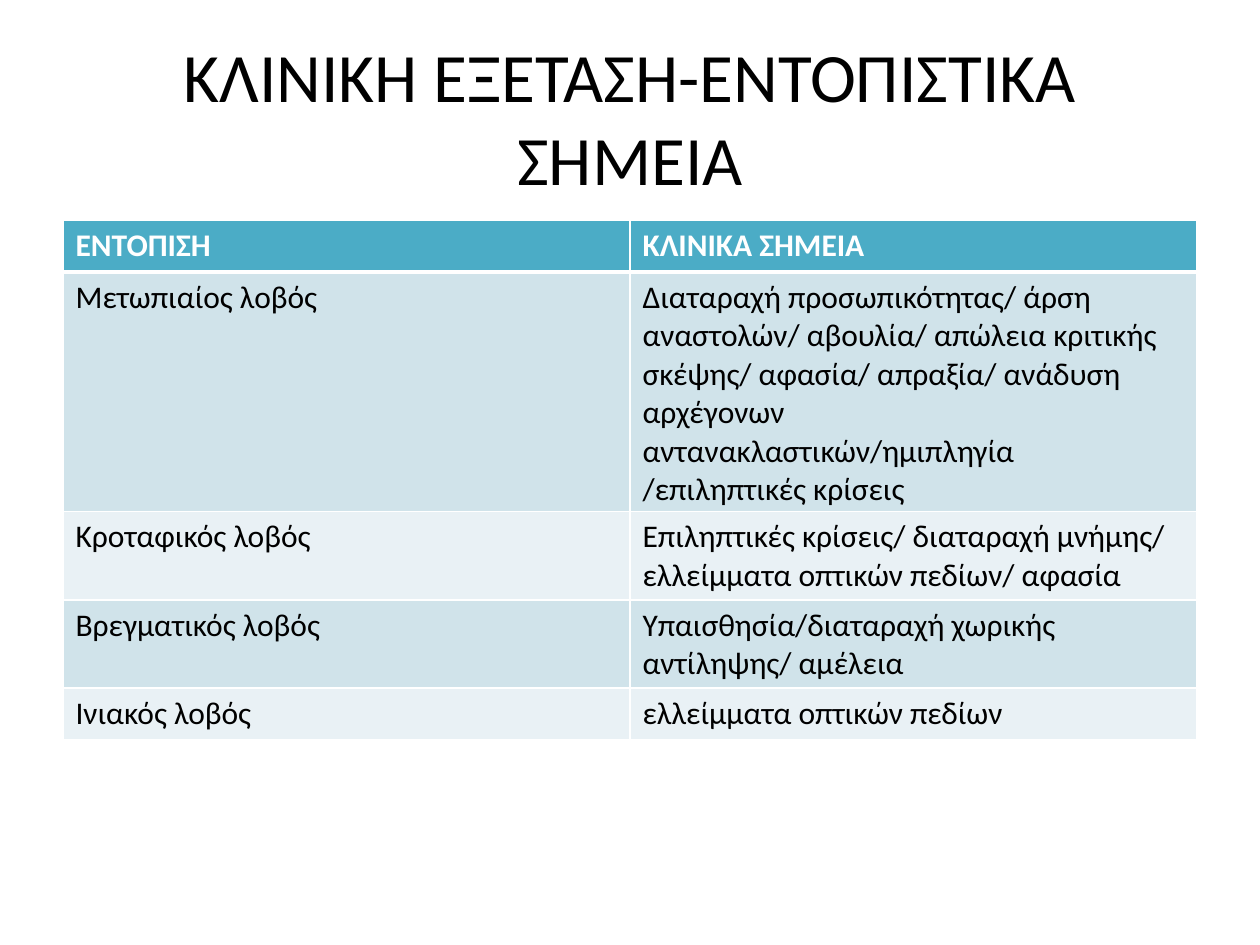
from lxml import etree
from pptx import Presentation
from pptx.dml.color import RGBColor
from pptx.enum import text
from pptx.oxml.ns import qn
from pptx.util import Inches, Pt

BLACK = RGBColor(0x00, 0x00, 0x00)
WHITE = RGBColor(0xFF, 0xFF, 0xFF)
HEADER_TEAL = RGBColor(0x4B, 0xAC, 0xC6)
BAND_DARK = RGBColor(0xD0, 0xE3, 0xEA)
BAND_LIGHT = RGBColor(0xE9, 0xF1, 0xF5)

ROWS = [
    ("ΕΝΤΟΠΙΣΗ", "ΚΛΙΝΙΚΑ ΣΗΜΕΙΑ"),
    ("Μετωπιαίος λοβός",
     "Διαταραχή προσωπικότητας/ άρση αναστολών/ αβουλία/ απώλεια κριτικής "
     "σκέψης/ αφασία/ απραξία/ ανάδυση αρχέγονων "
     "αντανακλαστικών/ημιπληγία /επιληπτικές κρίσεις"),
    ("Κροταφικός λοβός",
     "Επιληπτικές κρίσεις/ διαταραχή μνήμης/ ελλείμματα οπτικών πεδίων/ αφασία"),
    ("Βρεγματικός λοβός", "Υπαισθησία/διαταραχή χωρικής αντίληψης/ αμέλεια"),
    ("Ινιακός λοβός", "ελλείμματα οπτικών πεδίων"),
]


def add_border(cell, side, width):
    """Draw a white border on one side (L, R, T or B); call before filling the cell."""
    properties = cell._tc.get_or_add_tcPr()
    line = etree.SubElement(properties, qn(f"a:ln{side}"), w=str(Pt(width)))
    fill = etree.SubElement(line, qn("a:solidFill"))
    etree.SubElement(fill, qn("a:srgbClr"), val=str(WHITE))


presentation = Presentation()
presentation.slide_width = Inches(10)
presentation.slide_height = Inches(7.5)
slide = presentation.slides.add_slide(presentation.slide_layouts[6])

title = slide.shapes.add_textbox(Inches(0.5), Inches(0.3), Inches(9), Inches(1.25))
title.text_frame.word_wrap = True
title.text_frame.vertical_anchor = text.MSO_ANCHOR.MIDDLE
paragraph = title.text_frame.paragraphs[0]
paragraph.text = "ΚΛΙΝΙΚΗ ΕΞΕΤΑΣΗ-ΕΝΤΟΠΙΣΤΙΚΑ ΣΗΜΕΙΑ"
paragraph.alignment = text.PP_ALIGN.CENTER
paragraph.font.name = "Calibri"
paragraph.font.size = Pt(39.6)
paragraph.font.color.rgb = BLACK

row_height = Inches(0.41)
table = slide.shapes.add_table(
    len(ROWS), 2, Inches(0.5), Inches(1.75), Inches(9), row_height * len(ROWS)
).table

for row_index, row in enumerate(ROWS):
    is_header = row_index == 0
    band = BAND_DARK if row_index % 2 else BAND_LIGHT
    for column_index, wording in enumerate(row):
        cell = table.cell(row_index, column_index)
        for side in "LRTB":
            under_header = (row_index, side) in [(0, "B"), (1, "T")]
            add_border(cell, side, 3 if under_header else 1)
        cell.fill.solid()
        cell.fill.fore_color.rgb = HEADER_TEAL if is_header else band
        paragraph = cell.text_frame.paragraphs[0]
        paragraph.text = wording
        paragraph.font.name = "Calibri"
        paragraph.font.size = Pt(18)
        paragraph.font.bold = is_header
        paragraph.font.color.rgb = WHITE if is_header else BLACK

presentation.save("out.pptx")
